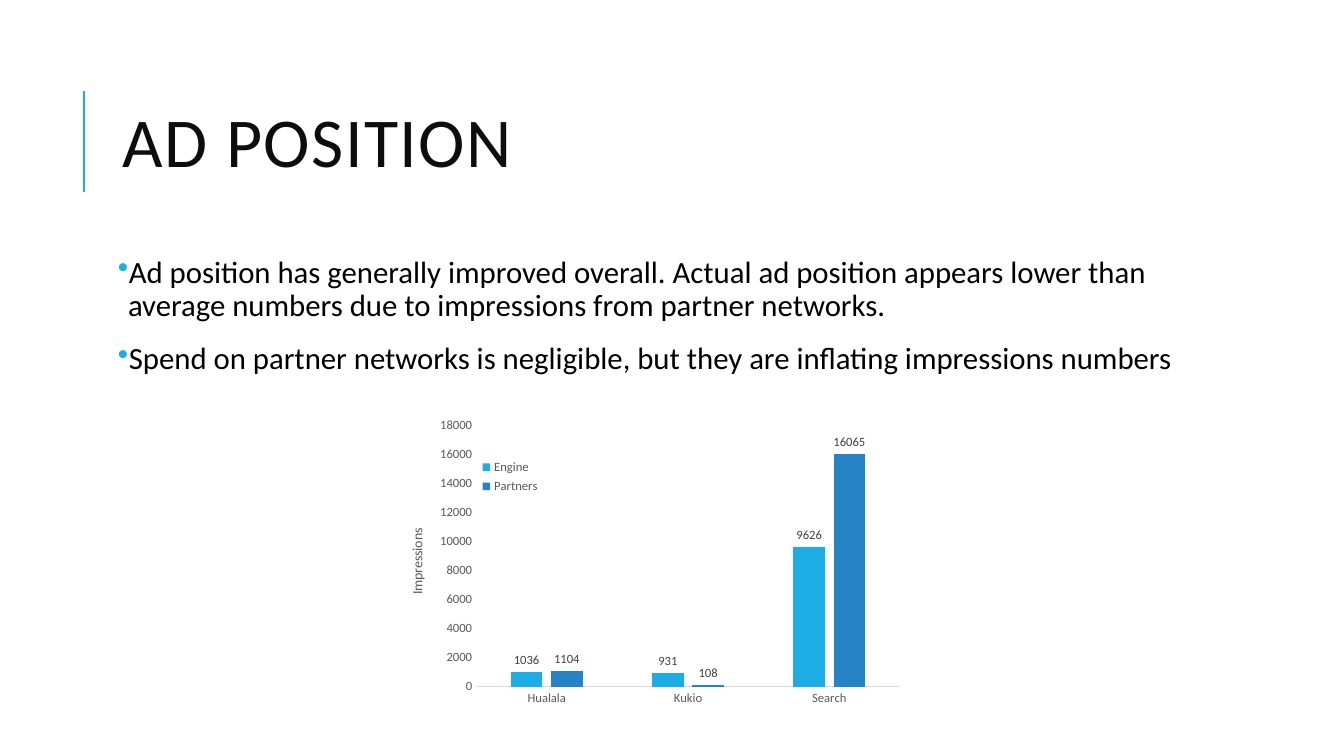
from lxml.etree import SubElement
from pptx import Presentation
from pptx.chart.data import CategoryChartData
from pptx.dml.color import RGBColor
from pptx.enum.chart import XL_CHART_TYPE, XL_LABEL_POSITION, XL_LEGEND_POSITION, XL_TICK_MARK
from pptx.enum.shapes import MSO_CONNECTOR
from pptx.enum.text import MSO_ANCHOR
from pptx.oxml import parse_xml
from pptx.oxml.ns import nsdecls, qn
from pptx.util import Inches, Pt

TITLE = "AD POSITION"
BULLETS = [
    "Ad position has generally improved overall. Actual ad position appears lower than "
    "average numbers due to impressions from partner networks.",
    "Spend on partner networks is negligible, but they are inflating impressions numbers",
]
CATEGORIES = ["Hualala", "Kukio", "Search"]
SERIES = [
    ("Engine", (1036, 931, 9626), "accent"),
    ("Partners", (1104, 108, 16065), "blue"),
]
AXIS_TITLE = "Impressions"
COLORS = {
    "accent": "1CADE4", "blue": "2683C6", "title": "0D0D0D", "text": "000000",
    "label": "404040", "axis": "595959", "rule": "D9D9D9",
}
FONT = "Calibri"
LEFT, WIDTH = 1.12, 10.63
# Shares of the chart's size: left, top, width, height
PLOT_AREA = (0.17, 0.04, 0.81, 0.79)
LEGEND_AREA = (0.17, 0.13, 0.13, 0.13)


def color(name):
    return RGBColor.from_string(COLORS[name])


def style(font, size, color_name):
    font.name, font.size, font.bold = FONT, Pt(size), False
    font.color.rgb = color(color_name)


def add_text(slide, top, height, lines, size, color_name, line_spacing):
    box = slide.shapes.add_textbox(Inches(LEFT), Inches(top), Inches(WIDTH), Inches(height))
    frame = box.text_frame
    frame.word_wrap = True
    frame.text = "\n".join(lines)
    for paragraph in frame.paragraphs:
        style(paragraph.font, size, color_name)
        paragraph.line_spacing = line_spacing
    return frame


def add_bullet(paragraph):
    paragraph.space_before, paragraph.space_after = Pt(12), Pt(2)
    properties = paragraph.font._element.getparent()
    properties.set("marL", str(Inches(0.1)))
    properties.set("indent", str(Inches(-0.1)))
    run_defaults = properties.find(qn("a:defRPr"))
    bullet_color = parse_xml(
        f'<a:buClr {nsdecls("a")}><a:srgbClr val="{COLORS["accent"]}"/></a:buClr>')
    bullet = parse_xml(f'<a:buChar {nsdecls("a")} char="•"/>')
    run_defaults.addprevious(bullet_color)
    run_defaults.addprevious(bullet)


def manual_layout(area, inner=False):
    target = '<c:layoutTarget val="inner"/>' if inner else ""
    modes = "".join(f'<c:{side}Mode val="edge"/>' for side in "xy")
    shares = "".join(f'<c:{key} val="{share}"/>' for key, share in zip("xywh", area))
    return parse_xml(f'<c:layout {nsdecls("c")}><c:manualLayout>{target}{modes}{shares}'
                     '</c:manualLayout></c:layout>')


def add_impressions_chart(slide):
    data = CategoryChartData()
    data.categories = CATEGORIES
    for name, values, _ in SERIES:
        data.add_series(name, values)
    chart = slide.shapes.add_chart(
        XL_CHART_TYPE.COLUMN_CLUSTERED, Inches(3.84), Inches(4.09),
        Inches(5.19), Inches(3.28), data).chart
    style(chart.font, 10, "text")
    chart.has_title = False

    plot = chart.plots[0]
    plot.gap_width, plot.overlap, plot.vary_by_categories = 219, -27, False
    for series, (_, _, fill) in zip(plot.series, SERIES):
        series.format.fill.solid()
        series.format.fill.fore_color.rgb = color(fill)
        labels = series.data_labels
        labels.show_value = True
        labels.position = XL_LABEL_POSITION.OUTSIDE_END
        style(labels.font, 9, "label")

    for axis in (chart.category_axis, chart.value_axis):
        axis.major_tick_mark = axis.minor_tick_mark = XL_TICK_MARK.NONE
        axis.has_major_gridlines = False
        style(axis.tick_labels.font, 9, "axis")
    category_line = chart.category_axis.format.line
    category_line.color.rgb = color("rule")
    category_line.width = Pt(0.75)
    value_axis = chart.value_axis
    value_axis.format.line.fill.background()
    value_axis.minimum_scale, value_axis.maximum_scale, value_axis.major_unit = 0, 18000, 2000
    title_frame = value_axis.axis_title.text_frame
    title_frame.text = AXIS_TITLE
    style(title_frame.paragraphs[0].font, 10, "axis")

    chart.has_legend = True
    legend = chart.legend
    legend.position = XL_LEGEND_POSITION.LEFT
    legend.include_in_layout = True
    style(legend.font, 9, "axis")
    legend._element.find(qn("c:legendPos")).addnext(manual_layout(LEGEND_AREA))

    plot_area = chart._chartSpace.chart.plotArea
    for layout in plot_area.findall(qn("c:layout")):
        plot_area.remove(layout)
    plot_area.insert(0, manual_layout(PLOT_AREA, inner=True))


def main():
    presentation = Presentation()
    presentation.slide_width, presentation.slide_height = Inches(13.33), Inches(7.5)
    slide = presentation.slides.add_slide(presentation.slide_layouts[6])

    accent_line = slide.shapes.add_connector(
        MSO_CONNECTOR.STRAIGHT, Inches(0.83), Inches(1.9), Inches(0.83), Inches(0.9))
    accent_line.line.color.rgb = color("accent")
    accent_line.line.width = Pt(1.5)
    SubElement(accent_line._element.spPr, qn("a:effectLst"))

    title = add_text(slide, 0.64, 1.64, [TITLE], 50, "title", 0.8)
    title.vertical_anchor = MSO_ANCHOR.MIDDLE
    title.paragraphs[0].runs[0].font._element.set("spc", "100")

    body = add_text(slide, 2.5, 4.4, BULLETS, 22, "text", 0.9)
    body.margin_left = body.margin_right = body.margin_top = body.margin_bottom = Inches(0.05)
    for paragraph in body.paragraphs:
        add_bullet(paragraph)

    add_impressions_chart(slide)
    presentation.save("out.pptx")


if __name__ == "__main__":
    main()
